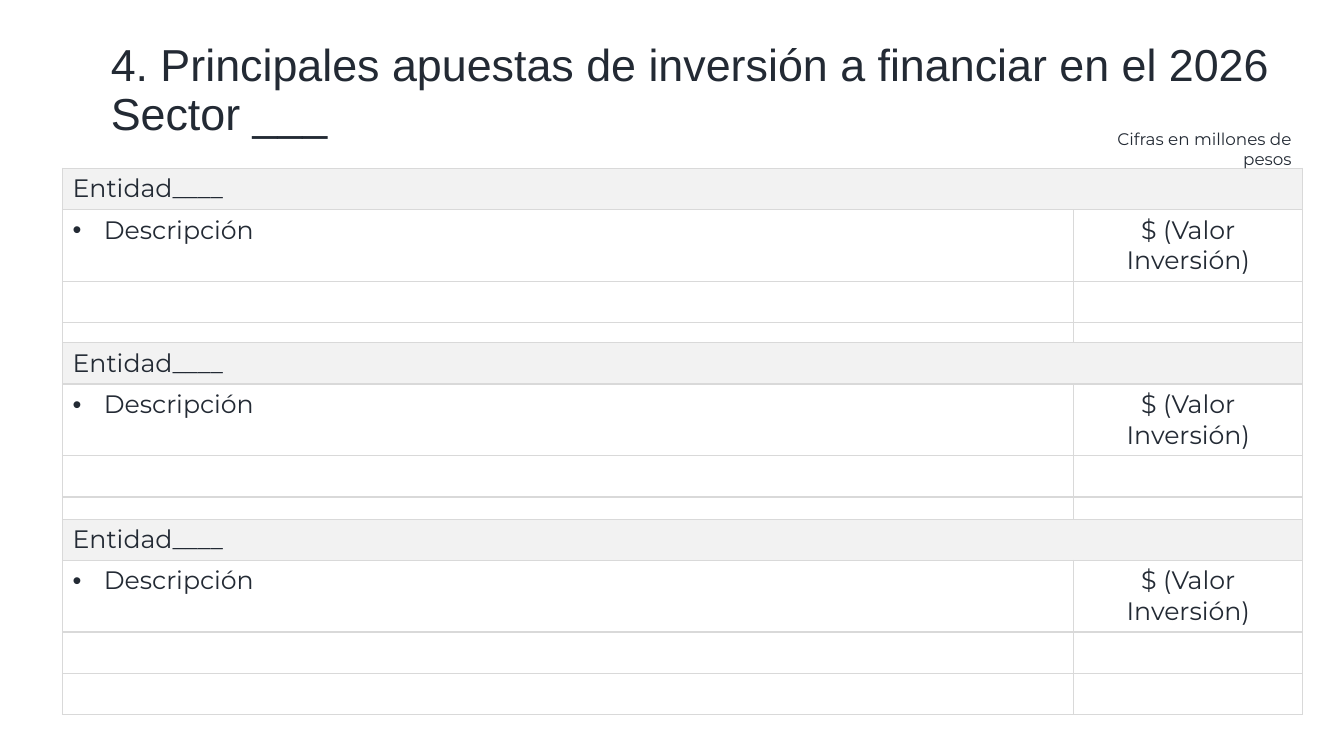
from dataclasses import dataclass

from lxml.etree import SubElement
from pptx import Presentation
from pptx.dml.color import RGBColor
from pptx.enum.text import MSO_ANCHOR as Anchor, MSO_AUTO_SIZE as AutoSize, PP_ALIGN as Align
from pptx.oxml.ns import qn
from pptx.slide import Slide
from pptx.table import _Cell as Cell
from pptx.text.text import _Paragraph as Paragraph
from pptx.util import Emu, Inches, Pt


@dataclass(frozen=True)
class Theme:
    ink: str = "232A34"
    border: str = "D9D9D9"
    band: str = "F2F2F2"
    title_font: str = "Arial"
    body_font: str = "Montserrat"
    title_size: int = 32
    body_size: int = 18
    note_size: int = 12
    border_width: int = 1


@dataclass(frozen=True)
class Entity:
    top: float
    heading: str = "Entidad____"
    description: str = "Descripción"
    amount: str = "$ (Valor Inversión)"


THEME = Theme()
ENTITIES = [Entity(1.67), Entity(3.4), Entity(5.15)]
COLUMNS = (10.03, 2.27)
ROW_COUNT = 4
ROW_HEIGHT = 0.41
TABLE_LEFT = 0.62
BULLET_INDENT = 0.31


def write(paragraph: Paragraph, text: str, size: int, font: str = THEME.body_font) -> None:
    run = paragraph.add_run()
    run.text = text
    run.font.size = Pt(size)
    run.font.name = font
    run.font.color.rgb = RGBColor.from_string(THEME.ink)


def add_bullet(paragraph: Paragraph) -> None:
    properties = paragraph._p.get_or_add_pPr()
    properties.set("marL", str(Inches(BULLET_INDENT)))
    properties.set("indent", str(-Inches(BULLET_INDENT)))
    SubElement(properties, qn("a:buFont"), typeface="Arial")
    SubElement(properties, qn("a:buChar"), char="•")


def add_borders(cell: Cell) -> None:
    properties = cell._tc.get_or_add_tcPr()
    for side in ("lnL", "lnR", "lnT", "lnB"):
        line = SubElement(properties, qn(f"a:{side}"), w=str(Pt(THEME.border_width)))
        fill = SubElement(line, qn("a:solidFill"))
        SubElement(fill, qn("a:srgbClr"), val=THEME.border)


def draw_entity(slide: Slide, entity: Entity) -> None:
    frame = slide.shapes.add_table(
        ROW_COUNT, len(COLUMNS), Inches(TABLE_LEFT), Inches(entity.top),
        Inches(sum(COLUMNS)), Inches(ROW_COUNT * ROW_HEIGHT))
    table = frame.table
    table.first_row = False
    table.horz_banding = False
    for column, width in zip(table.columns, COLUMNS):
        column.width = Inches(width)
    for row in table.rows:
        row.height = Inches(ROW_HEIGHT)
    for cell in table.iter_cells():
        add_borders(cell)
        cell.fill.background()

    heading = table.cell(0, 0)
    heading.merge(table.cell(0, 1))
    heading.fill.solid()
    heading.fill.fore_color.rgb = RGBColor.from_string(THEME.band)
    write(heading.text_frame.paragraphs[0], entity.heading, THEME.body_size)

    description = table.cell(1, 0).text_frame.paragraphs[0]
    add_bullet(description)
    write(description, entity.description, THEME.body_size)

    amount = table.cell(1, 1).text_frame.paragraphs[0]
    amount.alignment = Align.CENTER
    write(amount, entity.amount, THEME.body_size)


def add_text_area(slide: Slide, left: float, top: float, width: float, height: float) -> Paragraph:
    frame = slide.shapes.add_textbox(
        Inches(left), Inches(top), Inches(width), Inches(height)).text_frame
    frame.word_wrap = True
    frame.auto_size = AutoSize.NONE
    frame.vertical_anchor = Anchor.TOP
    return frame.paragraphs[0]


def draw_title(slide: Slide) -> None:
    title = add_text_area(slide, 1, 0.38, 12.01, 0.7)
    title.line_spacing = 0.9
    write(title, "4. Principales apuestas de inversión a financiar en el 2026",
          THEME.title_size, THEME.title_font)
    title.add_line_break()
    write(title, "Sector ___", THEME.title_size, THEME.title_font)


def draw_units_note(slide: Slide) -> None:
    note = add_text_area(slide, 10.6, 1.23, 2.31, 0.3)
    note.alignment = Align.RIGHT
    write(note, "Cifras en millones de pesos", THEME.note_size)


def main() -> None:
    presentation = Presentation()
    presentation.slide_width = Emu(Inches(13.33))
    presentation.slide_height = Inches(7.5)
    slide = presentation.slides.add_slide(presentation.slide_layouts[6])
    for entity in ENTITIES:
        draw_entity(slide, entity)
    draw_units_note(slide)
    draw_title(slide)
    presentation.save("out.pptx")


if __name__ == "__main__":
    main()
